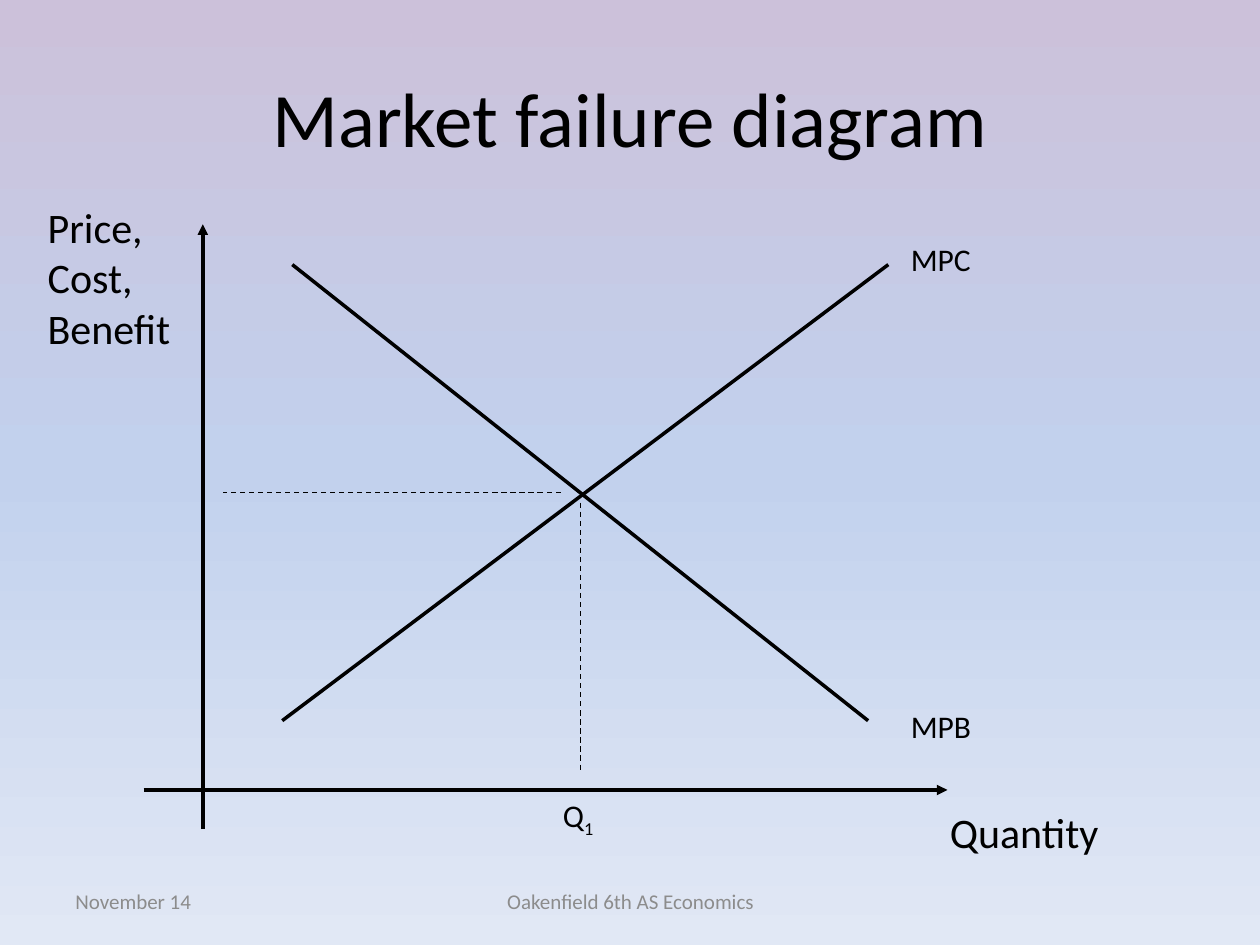
from copy import deepcopy
from pptx import Presentation
from pptx.dml.color import RGBColor as RGB
from pptx.enum.dml import MSO_LINE as Dash
from pptx.enum.shapes import MSO_CONNECTOR as Link
from pptx.enum.text import MSO_ANCHOR as Anchor, MSO_AUTO_SIZE as Auto, PP_ALIGN as Align
from pptx.oxml.ns import qn
from pptx.oxml.xmlchemy import OxmlElement as Node
from pptx.util import Inches, Pt

COLORS = {"ink": "000000", "grey": "8C8C8C",
          "top": "CCC1DA", "mid": "C2D1ED", "low": "E1E8F5"}


def tint(name):
    return RGB.from_string(COLORS[name])


class Board:
    font = "Calibri"

    def __init__(self, deck):
        self.slide = deck.slides.add_slide(deck.slide_layouts[5])

    def back(self, *names):
        fill = self.slide.background.fill
        fill.gradient()
        fill.gradient_angle = 270
        stops = next(self.slide.element.iter(qn("a:gsLst")))
        stops.insert(1, deepcopy(stops[0]))
        for i, (stop, name) in enumerate(zip(fill.gradient_stops, names)):
            stop.color.rgb = tint(name)
            stop.position = i / (len(names) - 1)

    def letter(self, shape, text, size, color="ink", align=Align.LEFT, sub="", **frame):
        body = shape.text_frame
        for key, value in frame.items():
            setattr(body, key, value)
        para = body.paragraphs[0]
        para.alignment = align
        look = {"name": self.font, "size": Pt(size)}
        for part in filter(None, (text, sub)):
            run = para.add_run()
            run.text = part
            for key, value in look.items():
                setattr(run.font, key, value)
            run.font.color.rgb = tint(color)
        if sub:
            run.font._element.set("baseline", "-25000")

    def title(self, text, box):
        shape = self.slide.shapes.title
        for key, value in zip(("left", "top", "width", "height"), box):
            setattr(shape, key, Inches(value))
        self.letter(shape, text, 44, align=Align.CENTER, vertical_anchor=Anchor.MIDDLE)

    def label(self, text, box, size=18, **form):
        shape = self.slide.shapes.add_textbox(*map(Inches, box))
        frame = {"word_wrap": False, "auto_size": Auto.SHAPE_TO_FIT_TEXT}
        self.letter(shape, text, size, **{**frame, **form})

    def line(self, start, end, width=2, dash=None, arrow=False):
        link = self.slide.shapes.add_connector(Link.STRAIGHT, *map(Inches, start + end))
        link.line.color.rgb = tint("ink")
        link.line.width = Pt(width)
        if dash:
            link.line.dash_style = dash
        if arrow:
            tip = Node("a:tailEnd")
            tip.set("type", "triangle")
            link.line._get_or_add_ln().append(tip)
        link._element.spPr.append(Node("a:effectLst"))


def main():
    deck = Presentation()
    deck.slide_width, deck.slide_height = Inches(10), Inches(7.5)
    board = Board(deck)
    board.back("top", "mid", "low")
    board.title("Market failure diagram", (0.5, 0.3, 9, 1.25))

    foot = {"size": 12, "color": "grey", "word_wrap": True,
            "auto_size": Auto.NONE, "vertical_anchor": Anchor.MIDDLE}
    board.label("November 14", (0.5, 6.95, 2.33, 0.4), **foot)
    board.label("Oakenfield 6th AS Economics", (3.42, 6.95, 3.17, 0.4),
                align=Align.CENTER, **foot)

    board.line((1.61, 6.58), (1.61, 1.78), arrow=True)
    board.line((1.14, 6.27), (7.52, 6.27), arrow=True)
    axis = {"size": 24, "word_wrap": True}
    board.label("Price, Cost, Benefit", (0.28, 1.55, 1.18, 1.31), **axis)
    board.label("Quantity", (7.44, 6.35, 1.5, 0.5), **axis)

    high, low = 2.1, 5.72
    board.line((7.05, high), (2.24, low))
    board.line((2.32, high), (6.89, low))
    for name, top in (("MPC", 1.86), ("MPB", 5.56)):
        board.label(name, (7.13, top, 0.68, 0.4))

    for start, end in (((4.61, 3.99), (4.61, 6.11)), ((4.45, 3.91), (1.77, 3.91))):
        board.line(start, end, 0.75, Dash.DASH)
    board.label("Q", (4.37, 6.27, 0.46, 0.4), sub="1")

    deck.save("out.pptx")


if __name__ == "__main__":
    main()
